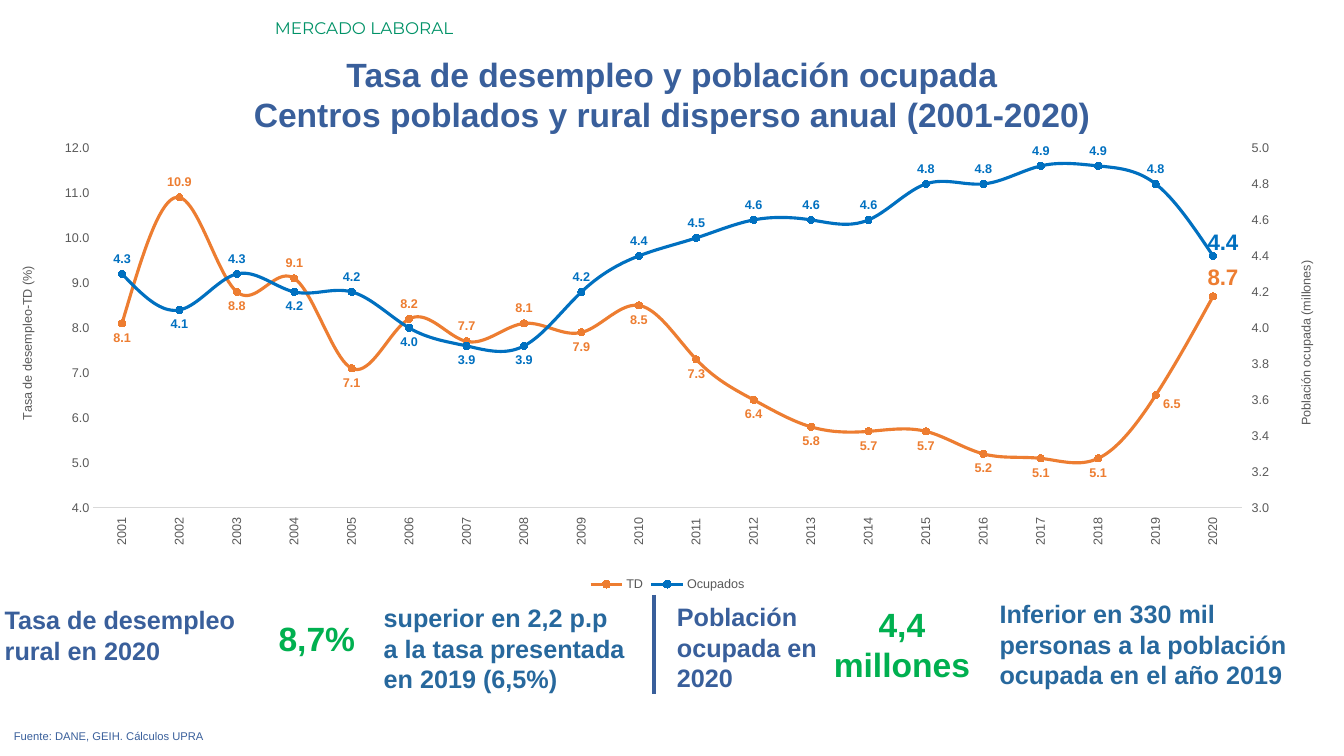
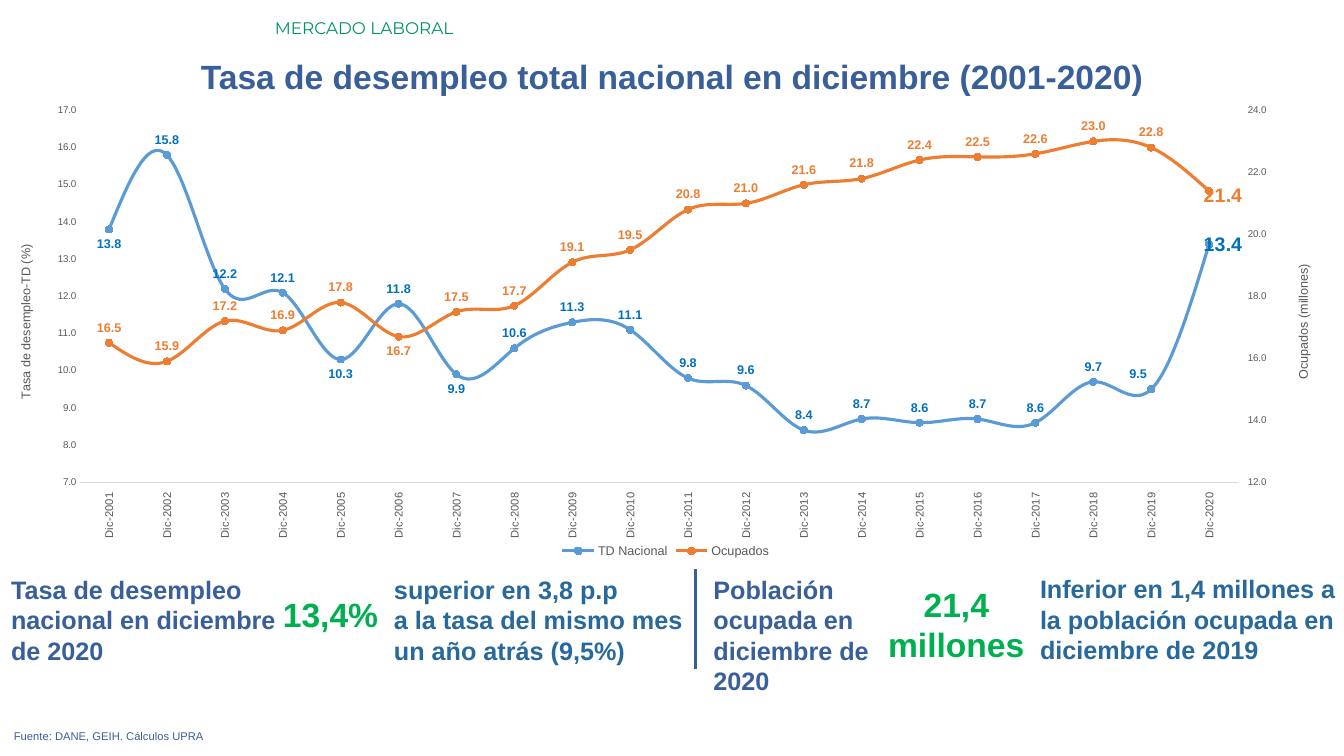
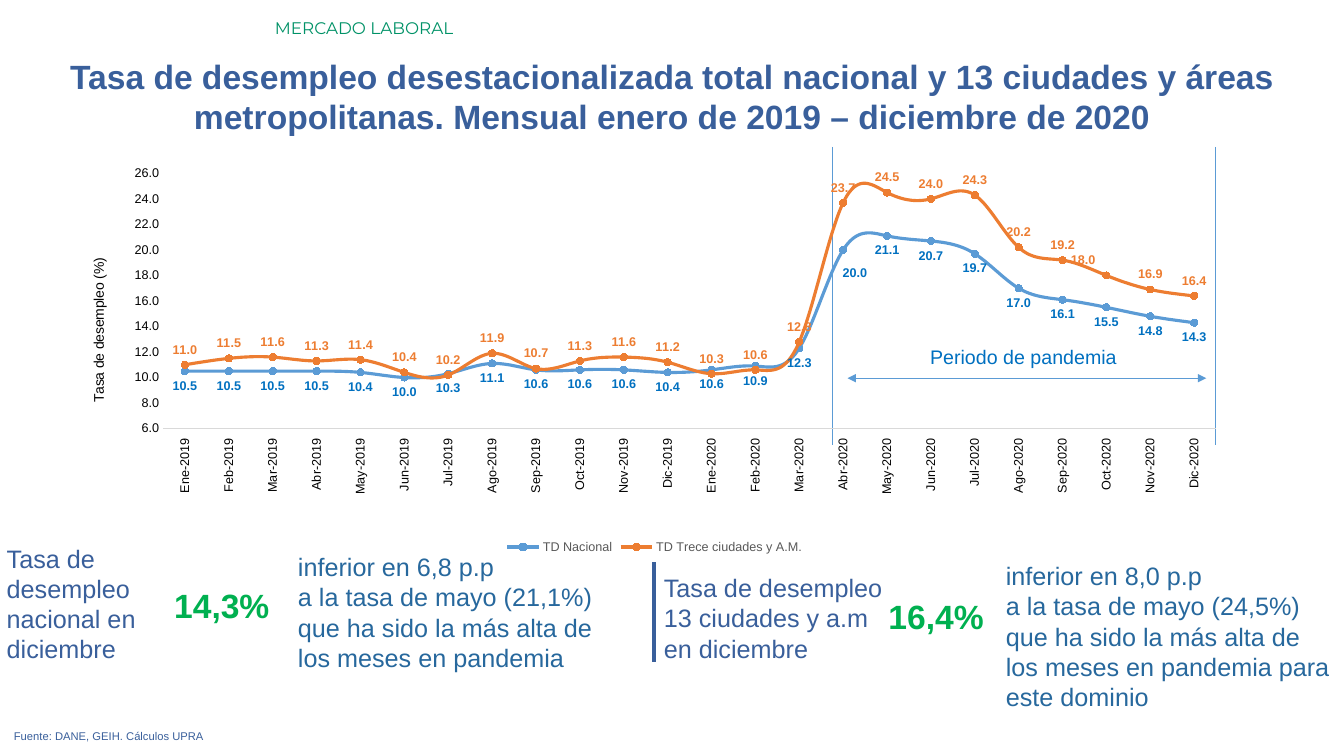
import copy

import pptx
import pptx.chart.axis
import pptx.chart.data
import pptx.dml.color
import pptx.enum.chart
import pptx.enum.shapes
import pptx.enum.text
import pptx.oxml
import pptx.oxml.ns
import pptx.util

Cm = pptx.util.Cm
Pt = pptx.util.Pt
qn = pptx.oxml.ns.qn
POS = pptx.enum.chart.XL_LABEL_POSITION
TICK_LABELS = pptx.enum.chart.XL_TICK_LABEL_POSITION
ALIGN = pptx.enum.text.PP_ALIGN

COLORS = {
    "title": "395F9B",
    "change": "27689D",
    "value": "00B050",
    "section": "009267",
    "orange": "ED7D31",
    "blue": "0070C0",
    "sky": "5B9BD5",
    "grey": "595959",
    "axis": "D9D9D9",
    "black": "000000",
}
WIDTH, HEIGHT = 33.87, 19.05
UPRIGHT = "-5400000"


def rgb(name):
    return pptx.dml.color.RGBColor.from_string(COLORS[name])


def set_font(font, size, color, bold=False, name="Arial"):
    font.name, font.size, font.bold = name, Pt(size), bold
    font.color.rgb = rgb(color)


def fill_text(tf, lines, size, color, bold=False, align=ALIGN.LEFT, name="Arial"):
    tf.word_wrap = True
    tf.vertical_anchor = pptx.enum.text.MSO_ANCHOR.TOP
    for i, line in enumerate(lines):
        p = tf.paragraphs[0] if i == 0 else tf.add_paragraph()
        p.text = line
        p.alignment = align
        set_font(p.font, size, color, bold, name)


def add_text(slide, box, lines, size, color, **style):
    sp = slide.shapes.add_textbox(*map(Cm, box))
    fill_text(sp.text_frame, lines, size, color, **style)
    sp.text_frame.auto_size = pptx.enum.text.MSO_AUTO_SIZE.SHAPE_TO_FIT_TEXT


def add_line(slide, x1, y1, x2, y2, color, width, arrows=False):
    cn = slide.shapes.add_connector(
        pptx.enum.shapes.MSO_CONNECTOR.STRAIGHT, *map(Cm, (x1, y1, x2, y2)))
    cn.line.color.rgb = rgb(color)
    cn.line.width = Pt(width)
    spPr = cn.element.spPr
    if arrows:
        ln = spPr.find(qn("a:ln"))
        for end in ("a:headEnd", "a:tailEnd"):
            ln.append(ln.makeelement(qn(end), {"type": "triangle"}))
    spPr.append(spPr.makeelement(qn("a:effectLst"), {}))


def new_slide(prs, title, top):
    slide = prs.slides.add_slide(prs.slide_layouts[5])
    sp = slide.shapes.title
    sp.left, sp.top, sp.width, sp.height = map(Cm, (0, top, WIDTH, 2.31))
    fill_text(sp.text_frame, title, 24, "title", bold=True, align=ALIGN.CENTER)
    sp.text_frame.auto_size = pptx.enum.text.MSO_AUTO_SIZE.NONE
    add_text(slide, (6.68, 0.33, 27.18, 0.76), ["MERCADO LABORAL"], 12, "section",
             name="Montserrat")
    add_text(slide, (0.1, 18.26, 32.79, 0.61), ["Fuente: DANE, GEIH. Cálculos UPRA"],
             8, "title", align=ALIGN.JUSTIFY)
    return slide


def indicator(slide, x, y, label, value, change, bold=True):
    value_align = ALIGN.RIGHT if value[0][0].endswith("%") else ALIGN.CENTER
    styles = (
        (label, 18, "title", bold, ALIGN.LEFT),
        (value, 24, "value", True, value_align),
        (change, 18, "change", bold, ALIGN.LEFT),
    )
    for (lines, dx, dy, w, h), size, color, weight, align in styles:
        add_text(slide, (x + dx, y + dy, w, h), lines, size, color,
                 bold=weight, align=align)


def divider(slide, x, y):
    add_line(slide, x, y, x, y + 2.51, "title", 2.25)


def pandemic_span(slide, x, y, w, h):
    for edge in (x, x + w):
        add_line(slide, edge, y, edge, y + h, "sky", 0.5)
    add_line(slide, x + 0.38, y + 5.83, x + w - 0.23, y + 5.83, "sky", 0.5, arrows=True)
    add_text(slide, (x + 2.21, y + 4.86, 6.68, 0.86), ["Periodo de pandemia"], 14, "blue")


def manual_layout(parent, index, **values):
    for old in parent.findall(qn("c:layout")):
        parent.remove(old)
    layout = parent.makeelement(qn("c:layout"), {})
    manual = layout.makeelement(qn("c:manualLayout"), {})
    layout.append(manual)
    for tag, val in values.items():
        manual.append(manual.makeelement(qn("c:" + tag), {"val": str(val)}))
    parent.insert(index, layout)


def format_series(ser, color, label_color, position, exceptions):
    ser.smooth = True
    ser.format.line.color.rgb = rgb(color)
    ser.format.line.width = Pt(2.25)
    ser.marker.style = pptx.enum.chart.XL_MARKER_STYLE.CIRCLE
    ser.marker.size = 5
    ser.marker.format.fill.solid()
    ser.marker.format.fill.fore_color.rgb = rgb(color)
    ser.marker.format.line.color.rgb = rgb(color)
    labels = ser.data_labels
    labels.show_value = True
    labels.position = position
    labels.number_format, labels.number_format_is_linked = "0.0", False
    set_font(labels.font, 9, label_color, True)
    for i, (place, size, dx, dy) in exceptions.items():
        label = ser.points[i].data_label
        set_font(label.font, size, label_color, True)
        label.position = place
        if dx or dy:
            dLbl = labels._element.xpath(f"c:dLbl[c:idx/@val='{i}']")[0]
            manual_layout(dLbl, 1, x=dx, y=dy)


def format_value_axis(axis, title, scale, size, title_size, color):
    axis.minimum_scale, axis.maximum_scale, axis.major_unit = scale
    axis.has_major_gridlines = False
    axis.major_tick_mark = pptx.enum.chart.XL_TICK_MARK.NONE
    axis.format.line.fill.background()
    axis.tick_labels.number_format = "0.0"
    axis.tick_labels.number_format_is_linked = False
    set_font(axis.tick_labels.font, size, color)
    tf = axis.axis_title.text_frame
    tf.text = title
    set_font(tf.paragraphs[0].font, title_size, color)


def add_right_axis(chart):
    area = chart.element.xpath(".//c:plotArea")[0]
    line = area.find(qn("c:lineChart"))
    second = copy.deepcopy(line)
    line.remove(line.findall(qn("c:ser"))[1])
    second.remove(second.findall(qn("c:ser"))[0])
    line.addnext(second)
    cat, val = (copy.deepcopy(area.find(qn(t))) for t in ("c:catAx", "c:valAx"))
    for ref, ident in zip(second.findall(qn("c:axId")), ("5001", "5002")):
        ref.set("val", ident)
    for ax, own, other, crossing in ((cat, "5001", "5002", "autoZero"),
                                     (val, "5002", "5001", "max")):
        ax.find(qn("c:axId")).set("val", own)
        cross = ax.find(qn("c:crossAx"))
        cross.set("val", other)
        for old in ax.findall(qn("c:crosses")) + ax.findall(qn("c:crossesAt")):
            ax.remove(old)
        cross.addnext(ax.makeelement(qn("c:crosses"), {"val": crossing}))
    val.find(qn("c:axPos")).set("val", "r")
    area.find(qn("c:valAx")).addnext(val)
    val.addnext(cat)
    pptx.chart.axis.CategoryAxis(cat).visible = False
    axis = pptx.chart.axis.ValueAxis(val)
    axis.tick_label_position = TICK_LABELS.HIGH
    return axis


def line_chart(slide, box, plot, cats, series, left, right=None,
               cat_size=9, val_size=9, title_size=9, color="grey"):
    data = pptx.chart.data.CategoryChartData(number_format="0.0")
    data.categories = cats
    for name, values, *_ in series:
        data.add_series(name, values)
    chart = slide.shapes.add_chart(
        pptx.enum.chart.XL_CHART_TYPE.LINE_MARKERS, *map(Cm, box), data).chart
    set_font(chart.font, 10, color)
    chart.has_title = False
    chart.plots[0].vary_by_categories = False
    chart.has_legend = True
    chart.legend.position = pptx.enum.chart.XL_LEGEND_POSITION.BOTTOM
    chart.legend.include_in_layout = False
    set_font(chart.legend.font, 9, "grey")
    for ser, (_, _, *style) in zip(chart.plots[0].series, series):
        format_series(ser, *style)
    axis = chart.category_axis
    axis.major_tick_mark = pptx.enum.chart.XL_TICK_MARK.NONE
    axis.tick_label_position = TICK_LABELS.LOW
    axis.format.line.color.rgb = rgb("axis")
    axis.format.line.width = Pt(0.75)
    set_font(axis.tick_labels.font, cat_size, color)
    format_value_axis(chart.value_axis, *left, val_size, title_size, color)
    if right:
        format_value_axis(add_right_axis(chart), *right, val_size, title_size, color)
    for body in chart.element.xpath(
            ".//c:valAx/c:title//a:bodyPr | .//c:catAx/c:txPr/a:bodyPr"):
        body.set("rot", UPRIGHT)
        body.set("vert", "horz")
    x, y, w, h = plot
    manual_layout(chart.element.xpath(".//c:plotArea")[0], 0, layoutTarget="inner",
                  xMode="edge", yMode="edge", x=x, y=y, w=w, h=h)


def at(position, *points):
    return dict.fromkeys(points, (position, 9, 0, 0))


def rural_slide(prs):
    slide = new_slide(prs, ["Tasa de desempleo y población ocupada",
                            "Centros poblados y rural disperso anual (2001-2020)"], 1.22)
    rate = (8.1, 10.9, 8.8, 9.1, 7.1, 8.2, 7.7, 8.1, 7.9, 8.5,
            7.3, 6.4, 5.8, 5.7, 5.7, 5.2, 5.1, 5.1, 6.5, 8.7)
    employed = (4.3, 4.1, 4.3, 4.2, 4.2, 4.0, 3.9, 3.9, 4.2, 4.4,
                4.5, 4.6, 4.6, 4.6, 4.8, 4.8, 4.9, 4.9, 4.8, 4.4)
    line_chart(
        slide, (0.38, 3.38, 32.89, 11.63), (0.06, 0.03, 0.88, 0.78),
        [str(y) for y in range(2001, 2021)],
        [("TD", rate, "orange", "orange", POS.BELOW,
          at(POS.ABOVE, 1, 3, 5, 6, 7)
          | {18: (POS.RIGHT, 9, 0, 0.02), 19: (POS.RIGHT, 16, -0.01, -0.04)}),
         ("Ocupados", employed, "blue", "blue", POS.ABOVE,
          at(POS.BELOW, 1, 3, 5, 6, 7) | {19: (POS.RIGHT, 16, -0.01, -0.03)})],
        ("Tasa de desempleo-TD (%)", (4, 12, 1)),
        ("Población ocupada (millones)", (3, 5, 0.2)))
    indicator(slide, -0.13, 15.11,
              (["Tasa de desempleo rural en 2020"], 0, 0, 7.42, 1.8),
              (["8,7%"], 6.23, 0.33, 3.1, 1.27),
              (["superior en 2,2 p.p", "a la tasa presentada en 2019 (6,5%)"],
               9.55, -0.05, 7.32, 2.57))
    divider(slide, 16.48, 14.99)
    indicator(slide, 16.81, 15.04,
              (["Población ocupada en 2020"], 0, 0, 4.32, 2.57),
              (["4,4 millones"], 3.76, 0.05, 4.32, 2.31),
              (["Inferior en 330 mil personas a la población ocupada en el año 2019"],
               8.13, -0.08, 8.33, 2.57))


def national_slide(prs):
    slide = new_slide(
        prs, ["Tasa de desempleo total nacional en diciembre (2001-2020)"], 1.27)
    rate = (13.8, 15.8, 12.2, 12.1, 10.3, 11.8, 9.9, 10.6, 11.3, 11.1,
            9.8, 9.6, 8.4, 8.7, 8.6, 8.7, 8.6, 9.7, 9.5, 13.4)
    employed = (16.5, 15.9, 17.2, 16.9, 17.8, 16.7, 17.5, 17.7, 19.1, 19.5,
                20.8, 21, 21.6, 21.8, 22.4, 22.5, 22.6, 23, 22.8, 21.4)
    line_chart(
        slide, (0.38, 2.31, 32.79, 11.86), (0.05, 0.04, 0.89, 0.79),
        [f"Dic-{y}" for y in range(2001, 2021)],
        [("TD Nacional", rate, "sky", "blue", POS.ABOVE,
          at(POS.BELOW, 0, 4, 6)
          | {18: (POS.ABOVE, 9, -0.01, 0), 19: (POS.RIGHT, 14, -0.01, 0)}),
         ("Ocupados", employed, "orange", "orange", POS.ABOVE,
          at(POS.BELOW, 5) | {19: (POS.RIGHT, 14, -0.01, 0.01)})],
        ("Tasa de desempleo-TD (%)", (7, 17, 1)),
        ("Ocupados (millones)", (12, 24, 2)),
        cat_size=8, val_size=7)
    indicator(slide, 0.03, 14.35,
              (["Tasa de desempleo nacional en diciembre de 2020"], 0, 0, 7.21, 2.57),
              (["13,4%"], 6.65, 0.48, 3.1, 1.27),
              (["superior en 3,8 p.p", "a la tasa del mismo mes un año atrás (9,5%)"],
               9.65, 0, 7.8, 2.57))
    divider(slide, 17.53, 14.35)
    indicator(slide, 17.73, 14.35,
              (["Población ocupada en diciembre de 2020"], 0, 0, 4.65, 3.33),
              (["21,4 millones"], 4.34, 0.23, 4.06, 2.31),
              (["Inferior en 1,4 millones a la población ocupada en diciembre de 2019"],
               8.23, -0.02, 8.18, 2.57))


def monthly_slide(prs):
    slide = new_slide(
        prs, ["Tasa de desempleo desestacionalizada total nacional y 13 ciudades y áreas "
              "metropolitanas. Mensual enero de 2019 – diciembre de 2020"], 1.27)
    months = "Ene Feb Mar Abr May Jun Jul Ago Sep Oct Nov Dic".split()
    national = (10.5, 10.5, 10.5, 10.5, 10.4, 10, 10.3, 11.1, 10.6, 10.6, 10.6, 10.4,
                10.6, 10.9, 12.3, 20, 21.1, 20.7, 19.7, 17, 16.1, 15.5, 14.8, 14.3)
    cities = (11, 11.5, 11.6, 11.3, 11.4, 10.4, 10.2, 11.9, 10.7, 11.3, 11.6, 11.2,
              10.3, 10.6, 12.8, 23.7, 24.5, 24, 24.3, 20.2, 19.2, 18, 16.9, 16.4)
    pandemic_span(slide, 20.98, 3.7, 9.65, 7.51)
    line_chart(
        slide, (1.75, 3.86, 29.49, 10.21), (0.08, 0.05, 0.9, 0.63),
        [f"{m}-{y}" for y in (2019, 2020) for m in months],
        [("TD Nacional", national, "sky", "blue", POS.BELOW,
          {15: (POS.BELOW, 9, 0.01, 0.02)}),
         ("TD Trece ciudades y A.M.", cities, "orange", "orange", POS.ABOVE,
          {21: (POS.ABOVE, 9, -0.02, 0)})],
        ("Tasa de desempleo (%)", (6, 26, 2)),
        title_size=10, color="black")
    indicator(slide, -0.08, 13.56,
              (["Tasa de desempleo nacional en diciembre"], 0, 0, 5.64, 3.33),
              (["14,3%"], 4.17, 1.05, 2.95, 1.27),
              (["inferior en 6,8 p.p", "a la tasa de mayo (21,1%) que ha sido la más "
                "alta de los meses en pandemia"], 7.34, 0.21, 8.76, 3.33),
              bold=False)
    divider(slide, 16.48, 14.17)
    indicator(slide, 16.48, 14.3,
              (["Tasa de desempleo", "13 ciudades y a.m en diciembre"], 0, 0, 6.22, 3.33),
              (["16,4%"], 4.88, 0.58, 3.68, 1.27),
              (["inferior en 8,0 p.p", "a la tasa de mayo (24,5%) que ha sido la más "
                "alta de los meses en pandemia para este dominio"], 8.62, -0.3, 8.76, 4.11),
              bold=False)


def main():
    prs = pptx.Presentation()
    prs.slide_width, prs.slide_height = Cm(WIDTH), Cm(HEIGHT)
    rural_slide(prs)
    national_slide(prs)
    monthly_slide(prs)
    prs.save("out.pptx")


if __name__ == "__main__":
    main()
